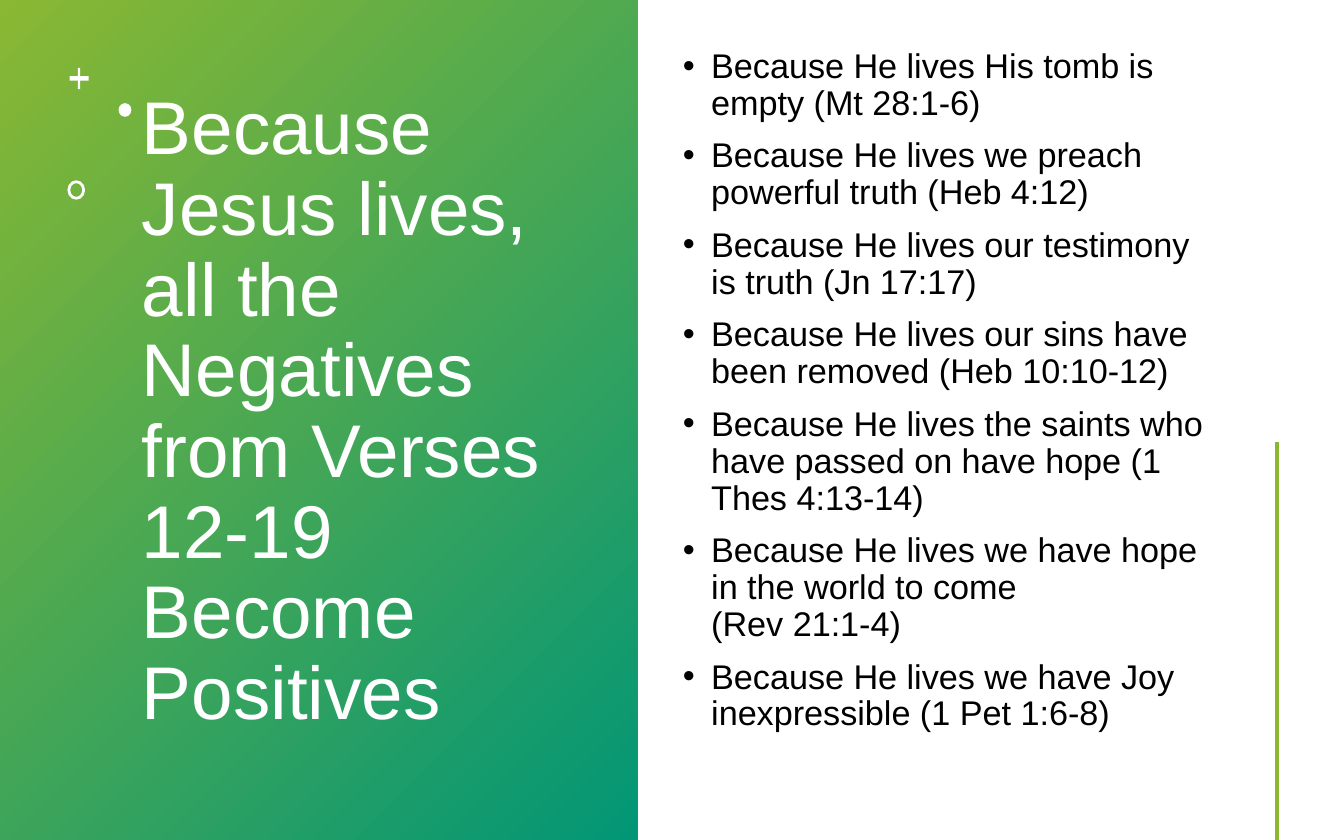
from dataclasses import dataclass

from lxml import etree
from pptx import Presentation
from pptx.dml.color import RGBColor
from pptx.enum.shapes import MSO_CONNECTOR, MSO_SHAPE
from pptx.enum.text import MSO_ANCHOR
from pptx.oxml.ns import qn
from pptx.util import Cm, Pt

STRAIGHT = MSO_CONNECTOR.STRAIGHT
RECTANGLE = MSO_SHAPE.RECTANGLE
CROSS = MSO_SHAPE.CROSS
OVAL = MSO_SHAPE.OVAL
DONUT = MSO_SHAPE.DONUT
MIDDLE = MSO_ANCHOR.MIDDLE

TITLE = "Because Jesus lives, all the Negatives from Verses 12-19 Become Positives"
REASONS = [
    "Because He lives His tomb is empty (Mt 28:1-6)",
    "Because He lives we preach powerful truth (Heb 4:12)",
    "Because He lives our testimony is truth (Jn 17:17)",
    "Because He lives our sins have been removed (Heb 10:10-12)",
    "Because He lives the saints who have passed on have hope (1 Thes 4:13-14)",
    "Because He lives we have hope in the world to come\v(Rev 21:1-4)",
    "Because He lives we have Joy inexpressible (1 Pet 1:6-8)",
]
SLIDE_SIZE = (30.48, 19.05)
PANEL_WIDTH = 14.45
TITLE_AREA = (2.97, 1.07, 10.03, 16.59)
REASONS_AREA = (15.24, 1.07, 12.47, 15.6)
ACCENT_LINE = (28.96, 10.03, 28.96, 19.05)
ORNAMENTS = [
    (CROSS, (1.58, 1.54, 0.43, 0.48), 0.44),
    (OVAL, (2.69, 2.34, 0.29, 0.31), None),
    (DONUT, (1.53, 4.09, 0.4, 0.44), 0.16),
]


@dataclass(frozen=True)
class Theme:
    font: str = "Arial"
    green: RGBColor = RGBColor(0x8A, 0xB8, 0x33)
    teal: RGBColor = RGBColor(0x02, 0x96, 0x76)
    light: RGBColor = RGBColor(0xFF, 0xFF, 0xFF)
    dark: RGBColor = RGBColor(0, 0, 0)
    title_size: int = 48
    body_size: int = 22


THEME = Theme()


def lengths(values):
    return [Cm(value) for value in values]


def add_bullet(para):
    properties = para._p.get_or_add_pPr()
    properties.set("marL", str(Cm(0.64)))
    properties.set("indent", str(-Cm(0.64)))
    etree.SubElement(properties, qn("a:buFont"), typeface=THEME.font)
    etree.SubElement(properties, qn("a:buChar"), char="•")


def add_text(page, area, texts, size, color, space_before=0, bullets=False):
    box = page.shapes.add_textbox(*lengths(area))
    frame = box.text_frame
    frame.word_wrap = True
    frame.vertical_anchor = MIDDLE
    for index, text in enumerate(texts):
        para = frame.add_paragraph() if index else frame.paragraphs[0]
        para.text = text
        para.line_spacing = 0.9
        para.space_before = Pt(space_before)
        if bullets:
            add_bullet(para)
        for span in para.runs:
            span.font.name = THEME.font
            span.font.size = Pt(size)
            span.font.color.rgb = color


def add_shape(page, kind, area):
    shape = page.shapes.add_shape(kind, *lengths(area))
    shape.shadow.inherit = False
    shape.line.fill.background()
    return shape


def add_panel(page):
    fill = add_shape(page, RECTANGLE, (0, 0, PANEL_WIDTH, SLIDE_SIZE[1])).fill
    fill.gradient()
    fill.gradient_angle = 315
    for stop, color, position in zip(fill.gradient_stops, (THEME.green, THEME.teal), (0, 1)):
        stop.color.rgb = color
        stop.position = position


def add_ornament(page, kind, area, thickness):
    shape = add_shape(page, kind, area)
    shape.fill.solid()
    shape.fill.fore_color.rgb = THEME.light
    if thickness:
        shape.adjustments[0] = thickness


def add_accent_line(page):
    line = page.shapes.add_connector(STRAIGHT, *lengths(ACCENT_LINE))
    line.line.color.rgb = THEME.green
    line.line.width = Pt(2)
    etree.SubElement(line._element.spPr, qn("a:effectLst"))


def main():
    """Build the slide and save it."""
    deck = Presentation()
    deck.slide_width, deck.slide_height = lengths(SLIDE_SIZE)
    page = deck.slides.add_slide(deck.slide_layouts[6])
    add_panel(page)
    add_text(page, TITLE_AREA, [TITLE], size=THEME.title_size, color=THEME.light)
    for kind, area, thickness in ORNAMENTS:
        add_ornament(page, kind, area, thickness)
    add_text(page, REASONS_AREA, REASONS, size=THEME.body_size, color=THEME.dark,
             space_before=10, bullets=True)
    add_accent_line(page)
    deck.save("out.pptx")


if __name__ == "__main__":
    main()
